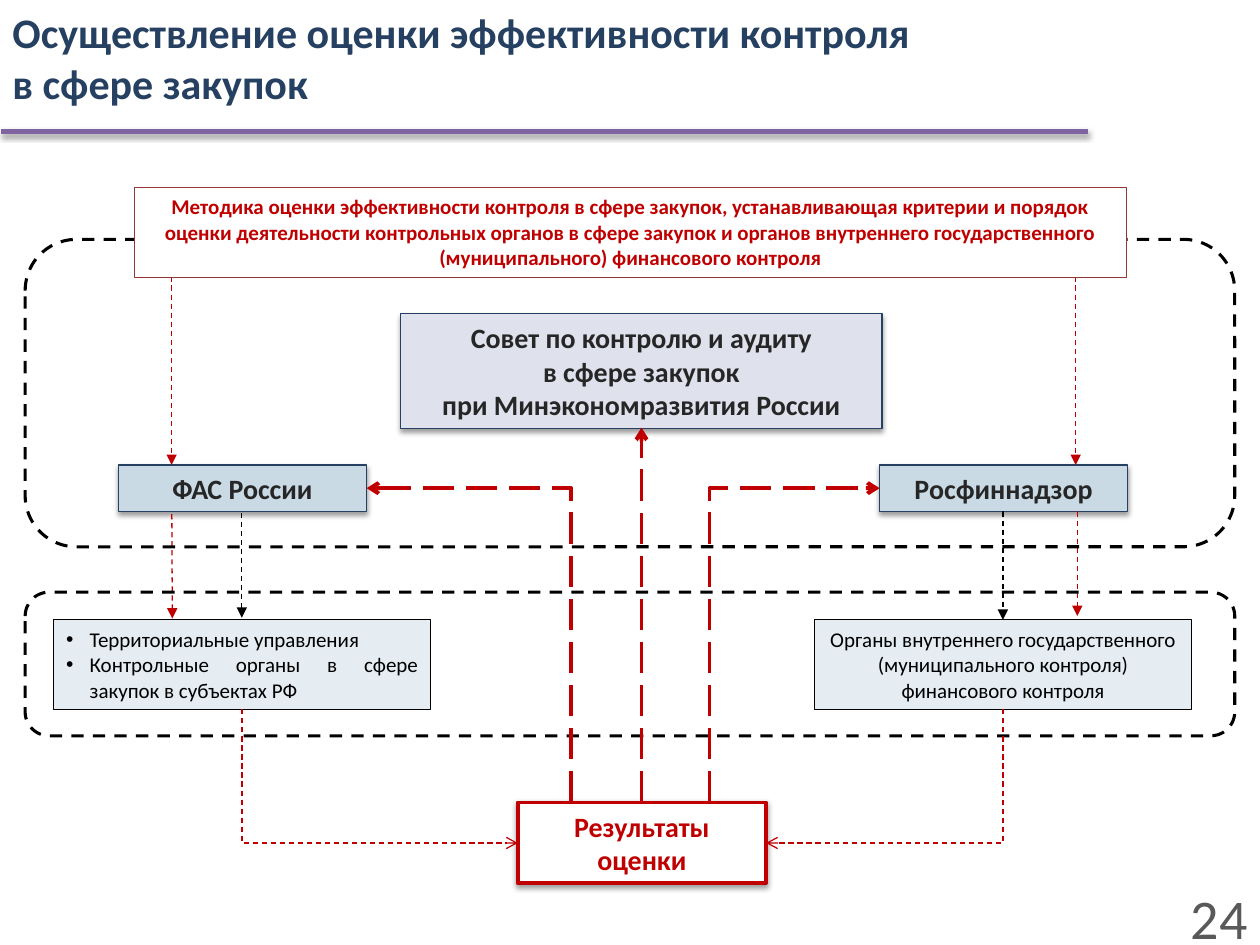
from dataclasses import dataclass
from typing import Optional

from lxml import etree
from pptx import Presentation
from pptx.dml.color import RGBColor
from pptx.enum.dml import MSO_LINE
from pptx.enum.shapes import MSO_CONNECTOR, MSO_SHAPE
from pptx.enum.text import MSO_ANCHOR, PP_ALIGN
from pptx.oxml.ns import qn
from pptx.util import Pt

RECT, ROUND = MSO_SHAPE.RECTANGLE, MSO_SHAPE.ROUNDED_RECTANGLE
STRAIGHT, ELBOW = MSO_CONNECTOR.STRAIGHT, MSO_CONNECTOR.ELBOW
DASH, LONG = MSO_LINE.DASH, MSO_LINE.LONG_DASH
LEFT, RIGHT, CENTER, JUSTIFY = (
    PP_ALIGN.LEFT, PP_ALIGN.RIGHT, PP_ALIGN.CENTER, PP_ALIGN.JUSTIFY)
TOP, MIDDLE = MSO_ANCHOR.TOP, MSO_ANCHOR.MIDDLE

NAVY = RGBColor(0x25, 0x40, 0x61)
RED = RGBColor(0xC0, 0x00, 0x00)
BRICK = RGBColor(0x95, 0x37, 0x35)
BLACK = RGBColor(0x00, 0x00, 0x00)
WHITE = RGBColor(0xFF, 0xFF, 0xFF)
INK = RGBColor(0x26, 0x26, 0x26)
GRAY = RGBColor(0x59, 0x59, 0x59)
PURPLE = RGBColor(0x80, 0x64, 0xA2)
BLUE = RGBColor(0xC9, 0xDA, 0xE5)
LILAC = RGBColor(0xDF, 0xE1, 0xED)
PALE = RGBColor(0xE5, 0xED, 0xF3)

FONT = "Calibri"
INDENT = 13.5


@dataclass
class Text:
    lines: tuple[str, ...]
    size: float
    color: RGBColor
    bold: bool = False
    align: PP_ALIGN = CENTER
    anchor: MSO_ANCHOR = MIDDLE
    bullet: bool = False


@dataclass
class Box:
    left: float
    top: float
    width: float
    height: float
    fill: Optional[RGBColor]
    edge: RGBColor
    text: Optional[Text] = None
    weight: float = 0.75
    shadow: bool = False
    kind: MSO_SHAPE = RECT
    dash: Optional[MSO_LINE] = None


@dataclass
class Arrow:
    x1: float
    y1: float
    x2: float
    y2: float
    color: RGBColor = RED
    weight: float = 0.75
    dash: Optional[MSO_LINE] = DASH
    head: Optional[str] = "triangle"
    bent: bool = False


# Shared positions of the scheme
ROW, ROW_END = 265.7, 292.3
UNIT, UNIT_END = 354.2, 405.3
LEFT_X, RIGHT_X = 138.2, 573.1
GOAL_L, GOAL_R, GOAL_TOP, GOAL_MID = 295.9, 437.7, 458.6, 481.7
ROW_MID = (ROW + ROW_END) / 2

TITLE = Text(("Осуществление оценки эффективности контроля\nв сфере закупок",),
             24, NAVY, True, LEFT)
NUMBER = Text(("24",), 32, GRAY, align=RIGHT)

BOXES = [
    Box(67.7, ROW, 141.8, 26.6, BLUE, NAVY,
        Text(("ФАС России",), 16, INK, True), shadow=True),
    Box(229, 179.3, 275, 65.5, LILAC, NAVY,
        Text(("Совет по контролю и аудиту", "в сфере закупок",
              "при Минэкономразвития России"), 16, INK, True), shadow=True),
    Box(502.6, ROW, 141.8, 26.6, BLUE, NAVY,
        Text(("Росфиннадзор",), 16, INK, True), shadow=True),
    Box(30.7, UNIT, 215.5, 51.1, PALE, BLACK,
        Text(("Территориальные управления",
              "Контрольные органы в сфере закупок в субъектах РФ"),
             12, BLACK, align=JUSTIFY, bullet=True)),
    Box(465.5, UNIT, 215.5, 51.1, PALE, BLACK,
        Text(("Органы внутреннего государственного",
              "(муниципального контроля) финансового контроля"), 12, BLACK),
        weight=0.5),
]
DROPS = [
    Arrow(98.1, 158, 98.1, ROW),
    Arrow(614.7, 158, 614.7, ROW),
    Arrow(RIGHT_X, ROW_END, RIGHT_X, UNIT, BLACK),
    Arrow(615.6, ROW_END, 615.6, 352),
    Arrow(LEFT_X, 293, LEFT_X, 353, BLACK),
    Arrow(98.2, 293.8, 98.5, 353.5),
]
FRAMES = [
    Box(14.4, top, 691.2, height, None, BLACK, None, 1.75, kind=ROUND, dash=DASH)
    for top, height in ((338.4, 82.1), (136.8, 175.7))
]
METHOD = Box(
    77, 107.3, 566.6, 51.1, WHITE, BRICK,
    Text(("Методика оценки эффективности контроля в сфере закупок, "
          "устанавливающая критерии и порядок оценки деятельности контрольных "
          "органов в сфере закупок и органов внутреннего государственного "
          "(муниципального) финансового контроля",), 12, RED, True, anchor=TOP))
GOAL = Box(GOAL_L, GOAL_TOP, 141.8, 46.1, WHITE, RED,
           Text(("Результаты оценки",), 16, RED, True), 2.25, True)
RULE = Arrow(0.5, 75, 621.5, 75, PURPLE, 3, None, None)
FLOWS = [
    Arrow(LEFT_X, UNIT_END, GOAL_L, GOAL_MID, head="arrow", bent=True),
    Arrow(RIGHT_X, UNIT_END, GOAL_R, GOAL_MID, head="arrow", bent=True),
    Arrow(366.6, GOAL_TOP, 366.6, 244.4, RED, 2.25, LONG, "arrow"),
    Arrow(326.2, GOAL_TOP, 209.5, ROW_MID, RED, 2.25, LONG, "arrow", True),
    Arrow(405.4, GOAL_TOP, 502.6, ROW_MID, RED, 2.25, LONG, "arrow", True),
]


def add_shade(effects, dist: float, alpha: int) -> None:
    """Put a soft downward shadow into an effect list."""
    shade = etree.SubElement(
        effects, qn("a:outerShdw"), blurRad=str(Pt(3.1)), dist=str(Pt(dist)),
        dir="5400000", rotWithShape="0")
    tone = etree.SubElement(shade, qn("a:srgbClr"), val="000000")
    etree.SubElement(tone, qn("a:alpha"), val=str(alpha * 1000))


def write(frame, text: Text) -> None:
    frame.word_wrap = True
    frame.vertical_anchor = text.anchor
    for i, line in enumerate(text.lines):
        para = frame.add_paragraph() if i else frame.paragraphs[0]
        para.text = line
        para.alignment = text.align
        font = para.font
        font.name, font.size, font.bold = FONT, Pt(text.size), text.bold
        font.color.rgb = text.color
        if text.bullet:
            props = para._p.get_or_add_pPr()
            props.set("marL", str(Pt(INDENT)))
            props.set("indent", str(-Pt(INDENT)))
            mark = etree.Element(qn("a:buChar"), char="•")
            props.insert(0, mark)
            mark.addprevious(etree.Element(qn("a:buFont"), typeface="Arial"))


def add_label(slide, left: float, top: float, width: float, height: float,
              text: Text) -> None:
    label = slide.shapes.add_textbox(Pt(left), Pt(top), Pt(width), Pt(height))
    write(label.text_frame, text)


def add_box(slide, box: Box) -> None:
    shape = slide.shapes.add_shape(
        box.kind, Pt(box.left), Pt(box.top), Pt(box.width), Pt(box.height))
    if box.fill is None:
        shape.fill.background()
    else:
        shape.fill.solid()
        shape.fill.fore_color.rgb = box.fill
    shape.line.color.rgb = box.edge
    shape.line.width = Pt(box.weight)
    if box.dash:
        shape.line.dash_style = box.dash
    shape.shadow.inherit = False
    if box.shadow:
        add_shade(shape._element.spPr.find(qn("a:effectLst")), 1.6, 38)
    if box.text:
        write(shape.text_frame, box.text)


def add_bend(slide, arrow: Arrow):
    """Draw an elbow that runs upright first, then level."""
    right, up = arrow.x2 > arrow.x1, arrow.y2 < arrow.y1
    mid_x, mid_y = (arrow.x1 + arrow.x2) / 2, (arrow.y1 + arrow.y2) / 2
    # Width and height swap because the elbow is turned a quarter
    dx = abs(arrow.y2 - arrow.y1) / 2 * (-1 if right else 1)
    dy = abs(arrow.x2 - arrow.x1) / 2 * (-1 if up else 1)
    line = slide.shapes.add_connector(
        ELBOW, Pt(mid_x - dx), Pt(mid_y - dy), Pt(mid_x + dx), Pt(mid_y + dy))
    props = line._element.spPr
    props.find(qn("a:prstGeom")).set("prst", "bentConnector2")
    turn = 90 if right == up else 270
    props.find(qn("a:xfrm")).set("rot", str(turn * 60000))
    return line


def add_arrow(slide, arrow: Arrow, shadow: bool = False) -> None:
    if arrow.bent:
        line = add_bend(slide, arrow)
    else:
        line = slide.shapes.add_connector(
            STRAIGHT, Pt(arrow.x1), Pt(arrow.y1), Pt(arrow.x2), Pt(arrow.y2))
    line.line.color.rgb = arrow.color
    line.line.width = Pt(arrow.weight)
    if arrow.dash:
        line.line.dash_style = arrow.dash
    props = line._element.spPr
    if arrow.head:
        etree.SubElement(props.find(qn("a:ln")), qn("a:tailEnd"), type=arrow.head)
    effects = etree.SubElement(props, qn("a:effectLst"))
    if shadow:
        add_shade(effects, 1.8, 35)


def main() -> None:
    deck = Presentation()
    deck.slide_width, deck.slide_height = Pt(720), Pt(540)
    slide = deck.slides.add_slide(deck.slide_layouts[6])
    add_label(slide, 0, 0, 623.5, 65.5, TITLE)
    for box in BOXES:
        add_box(slide, box)
    for drop in DROPS:
        add_arrow(slide, drop)
    for box in (*FRAMES, METHOD):
        add_box(slide, box)
    add_arrow(slide, RULE, shadow=True)
    add_label(slide, 672.5, 507.6, 47.5, 32.4, NUMBER)
    add_box(slide, GOAL)
    for flow in FLOWS:
        add_arrow(slide, flow)
    deck.save("out.pptx")


if __name__ == "__main__":
    main()
